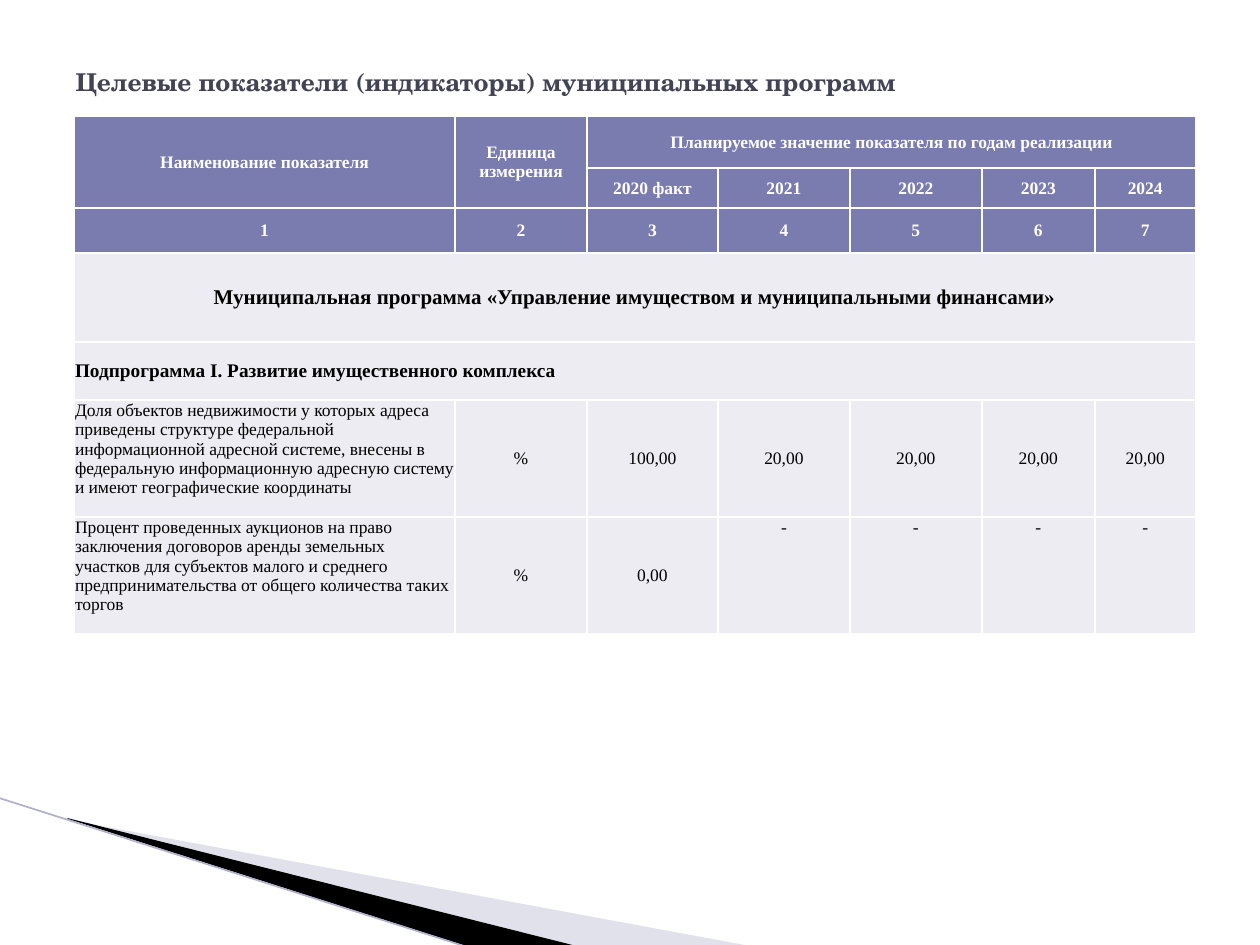
"""Builds the slide with target indicators of municipal programmes."""
import pptx
import pptx.dml.color
import pptx.enum.text
import pptx.oxml
import pptx.oxml.ns
import pptx.util

PX = 914400 // 126
SERIF = "Times New Roman"
HEAD, BODY, WHITE, BLACK = "7A7BAE", "ECECF2", "FFFFFF", "000000"
CENTER, LEFT = pptx.enum.text.PP_ALIGN.CENTER, pptx.enum.text.PP_ALIGN.LEFT
MIDDLE, TOP = pptx.enum.text.MSO_ANCHOR.MIDDLE, pptx.enum.text.MSO_ANCHOR.TOP

TITLE = "Целевые показатели (индикаторы) муниципальных программ"
COLS = [381, 132, 131, 132, 132, 113, 101]
HEIGHTS = [52, 40, 45, 89, 58, 117, 117]
ROWS = [
    ["Наименование показателя", "Единица измерения",
     "Планируемое значение показателя по годам реализации"],
    ["", "", "2020 факт", "2021", "2022", "2023", "2024"],
    ["1", "2", "3", "4", "5", "6", "7"],
    ["Муниципальная программа «Управление имуществом и муниципальными финансами»"],
    ["Подпрограмма I. Развитие имущественного комплекса"],
    ["Доля объектов недвижимости у которых адреса приведены структуре федеральной "
     "информационной адресной системе, внесены в федеральную информационную адресную "
     "систему и имеют географические координаты",
     "%", "100,00", "20,00", "20,00", "20,00", "20,00"],
    ["Процент проведенных аукционов на право заключения договоров аренды земельных "
     "участков для субъектов малого и среднего предпринимательства от общего "
     "количества таких торгов",
     "%", "0,00", "-", "-", "-", "-"],
]
MERGES = [((0, 0), (1, 0)), ((0, 1), (1, 1)), ((0, 2), (0, 6)),
          ((3, 0), (3, 6)), ((4, 0), (4, 6))]
SIZES = {3: 12, 4: 11}
WEDGES = [
    ([(69, 820), (750, 946), (575, 946), (69, 819)], "B6B6D1", 40),
    ([(67, 818), (576, 946), (469, 947), (68, 819)], BLACK, 100),
]
EDGE = (-1, 798, 467, 947)


def rgb(value):
    return pptx.dml.color.RGBColor.from_string(value)


def px(*values):
    return [v * PX for v in values]


def style(p, face, size, color, bold, align):
    p.alignment = align
    p.font.name, p.font.size, p.font.bold = face, pptx.util.Pt(size), bold
    p.font.color.rgb = rgb(color)


def add_wedge(slide, points, color, alpha):
    builder = slide.shapes.build_freeform(*points[0], scale=PX)
    builder.add_line_segments(points[1:], close=True)
    sp = builder.convert_to_shape()
    sp.shadow.inherit = False
    sp.line.fill.background()
    sp.fill.solid()
    sp.fill.fore_color.rgb = rgb(color)
    if alpha < 100:
        clr = sp.fill._xPr.find(".//" + pptx.oxml.ns.qn("a:srgbClr"))
        clr.append(pptx.oxml.parse_xml(
            f'<a:alpha {pptx.oxml.ns.nsdecls("a")} val="{alpha * 1000}"/>'))


def add_edge(slide):
    line = slide.shapes.add_connector(pptx.enum.shapes.MSO_CONNECTOR.STRAIGHT, *px(*EDGE))
    line.line.color.rgb = rgb("AFB0CC")
    line.line.width = pptx.util.Pt(0.95)
    line._element.spPr.append(pptx.oxml.parse_xml(
        f'<a:effectLst {pptx.oxml.ns.nsdecls("a")}/>'))


def add_title(slide):
    title = slide.shapes.title
    title.left, title.top, title.width, title.height = px(63, 38, 1134, 87)
    tf = title.text_frame
    tf.text = TITLE
    tf.auto_size = pptx.enum.text.MSO_AUTO_SIZE.NONE
    tf.vertical_anchor = MIDDLE
    style(tf.paragraphs[0], "TeX Gyre Schola", 14, "424456", True, LEFT)


def format_cell(cell, row, col):
    head = row < 3
    cell.margin_left, cell.margin_right, cell.margin_top, cell.margin_bottom = px(1, 1, 1, 0)
    at_top = (row == 5 and col == 0) or (row == 6 and col not in (1, 2))
    cell.vertical_anchor = TOP if at_top else MIDDLE
    align = LEFT if row > 3 and col == 0 else CENTER
    style(cell.text_frame.paragraphs[0], SERIF, SIZES.get(row, 10),
          WHITE if head else BLACK, row < 5, align)
    tc_pr = cell._tc.get_or_add_tcPr()
    for side in ("lnL", "lnR", "lnT", "lnB"):
        tc_pr.append(pptx.oxml.parse_xml(
            f'<a:{side} {pptx.oxml.ns.nsdecls("a")} w="12700"><a:solidFill>'
            f'<a:srgbClr val="{WHITE}"/></a:solidFill></a:{side}>'))
    cell.fill.solid()
    cell.fill.fore_color.rgb = rgb(HEAD if head else BODY)


def add_indicators(slide):
    frame = slide.shapes.add_table(len(ROWS), len(COLS),
                                   *px(74, 116, sum(COLS), sum(HEIGHTS)))
    table = frame.table
    for column, width in zip(table.columns, COLS):
        column.width = width * PX
    for row, height in zip(table.rows, HEIGHTS):
        row.height = height * PX
    for r, texts in enumerate(ROWS):
        for c, text in enumerate(texts):
            table.cell(r, c).text = text
        for c in range(len(COLS)):
            format_cell(table.cell(r, c), r, c)
    for first, last in MERGES:
        table.cell(*first).merge(table.cell(*last))


def main():
    prs = pptx.Presentation()
    prs.slide_width, prs.slide_height = px(1260, 945)
    slide = prs.slides.add_slide(prs.slide_layouts[5])
    for wedge in WEDGES:
        add_wedge(slide, *wedge)
    add_edge(slide)
    add_title(slide)
    add_indicators(slide)
    prs.save("out.pptx")


if __name__ == "__main__":
    import pptx.enum.shapes
    main()
